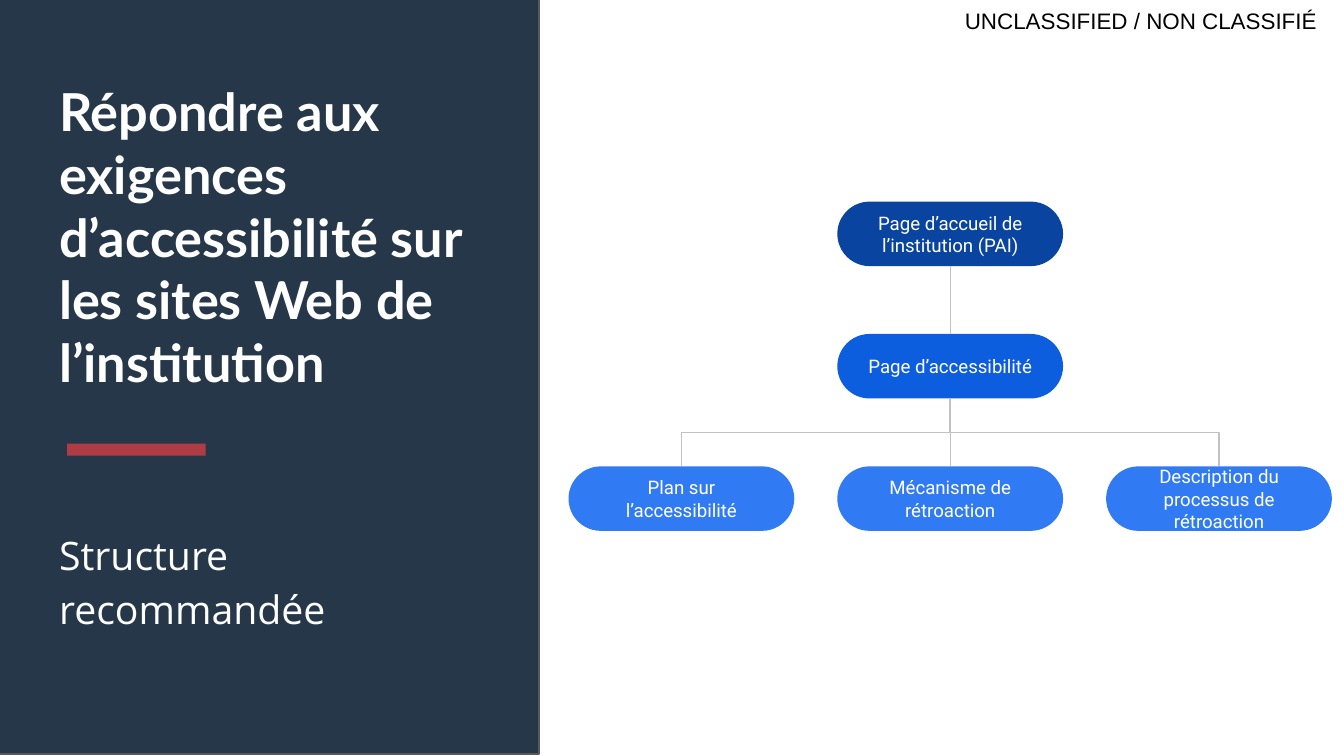
from lxml import etree
from pptx import Presentation
from pptx.dml.color import RGBColor
from pptx.enum.shapes import MSO_CONNECTOR as CONN, MSO_SHAPE as SHAPE
from pptx.enum.text import MSO_ANCHOR as ANCHOR, MSO_AUTO_SIZE as AUTO, PP_ALIGN as ALIGN
from pptx.oxml.ns import qn
from pptx.util import Inches, Pt

WHITE = RGBColor(0xFF, 0xFF, 0xFF)
BLACK = RGBColor(0, 0, 0)
SLATE = RGBColor(0x26, 0x37, 0x4A)
EDGE = RGBColor(0x59, 0x59, 0x59)
RED = RGBColor(0xAF, 0x3C, 0x43)
GREY = RGBColor(0xC2, 0xC2, 0xC2)
LEVELS = [RGBColor(0x09, 0x44, 0xA1), RGBColor(0x0D, 0x5D, 0xDF), RGBColor(0x30, 0x7B, 0xF3)]


def write(sp, text, font, size, color=WHITE, bold=False, align=ALIGN.LEFT,
          anchor=ANCHOR.TOP, inset=0.1, spacing=None):
    tf = sp.text_frame
    tf.word_wrap, tf.auto_size, tf.vertical_anchor = True, AUTO.NONE, anchor
    tf.margin_left = tf.margin_right = tf.margin_top = tf.margin_bottom = Inches(inset)
    p = tf.paragraphs[0]
    p.alignment, p.line_spacing, p.space_before = align, spacing, Pt(0)
    r = p.add_run()
    r.text = text
    r.font.name, r.font.size, r.font.bold = font, Pt(size), bold
    r.font.color.rgb = color


def add_block(kind, x, y, w, h, fill):
    sp = s.shapes.add_shape(kind, Inches(x), Inches(y), Inches(w), Inches(h))
    sp.shadow.inherit = False
    sp.fill.solid()
    sp.fill.fore_color.rgb = fill
    sp.line.fill.background()
    return sp


prs = Presentation()
prs.slide_width = Inches(10)
prs.slide_height = prs.slide_width * 9 // 16
s = prs.slides.add_slide(prs.slide_layouts.get_by_name("Content with Caption"))
title, content, body = s.placeholders
content.element.getparent().remove(content.element)

# Left panel, placed behind the placeholders
panel = add_block(SHAPE.RECTANGLE, -0.04, -0.01, 4.05, 5.62, SLATE)
panel.line.color.rgb = EDGE
panel.line.width = Pt(0.75)
s.shapes._spTree.insert(2, panel.element)
add_block(SHAPE.RECTANGLE, 0.5, 3.3, 1.03, 0.09, RED)

for sp, y, w in [(title, 0.49, 3.36), (body, 3.8, 3.41)]:
    sp.left, sp.top, sp.width, sp.height = Inches(0.34), Inches(y), Inches(w), Inches(1.57)
write(title, "Répondre aux exigences d’accessibilité sur les sites Web de l’institution",
      "Lato", 28, bold=True)
write(body, "Structure recommandée", "Open Sans", 21, spacing=1.15)

marking = s.shapes.add_textbox(Inches(6.98), 0, Inches(3.02), Inches(0.31))
write(marking, "UNCLASSIFIED / NON CLASSIFIÉ", "Arial", 12, BLACK,
      align=ALIGN.RIGHT, anchor=ANCHOR.MIDDLE, inset=0)
marking.text_frame.margin_right = Inches(0.2)

# Site tree: (column, row, label)
BOX_W, BOX_H = 1.68, 0.48
LEFT, TOP, COL, ROW = 4.23, 1.5, 2, 1.97 / 2
nodes = [
    (1, 0, "Page\u00a0d’accueil de l’institution (PAI)"),
    (1, 1, "Page\u00a0d’accessibilité"),
    (0, 2, "Plan sur l’accessibilité"),
    (1, 2, "Mécanisme de rétroaction"),
    (2, 2, "Description du processus de rétroaction"),
]
for col, row, label in nodes:
    box = add_block(SHAPE.ROUNDED_RECTANGLE, LEFT + col * COL, TOP + row * ROW,
                    BOX_W, BOX_H, LEVELS[row])
    box.adjustments[0] = 0.5
    write(box, label, "Roboto", 10, align=ALIGN.CENTER, anchor=ANCHOR.MIDDLE)

# Every node below the first hangs from the middle column of the row above.
# An elbow leaves sideways, so it is laid out flat and turned 90 degrees.
gap = ROW - BOX_H
for col, row, _ in nodes[1:]:
    dx = (col - 1) * COL
    cx = LEFT + COL + BOX_W / 2 + dx / 2
    cy = TOP + row * ROW - gap / 2
    ends = (cx - gap / 2, cy + dx / 2, cx + gap / 2, cy - dx / 2)
    line = s.shapes.add_connector(CONN.ELBOW, *map(Inches, ends))
    line.line.color.rgb = GREY
    line.line.width = Pt(0.75)
    spPr = line.element.spPr
    etree.SubElement(spPr, qn("a:effectLst"))
    spPr.find(qn("a:xfrm")).set("rot", "5400000")

prs.save("out.pptx")
